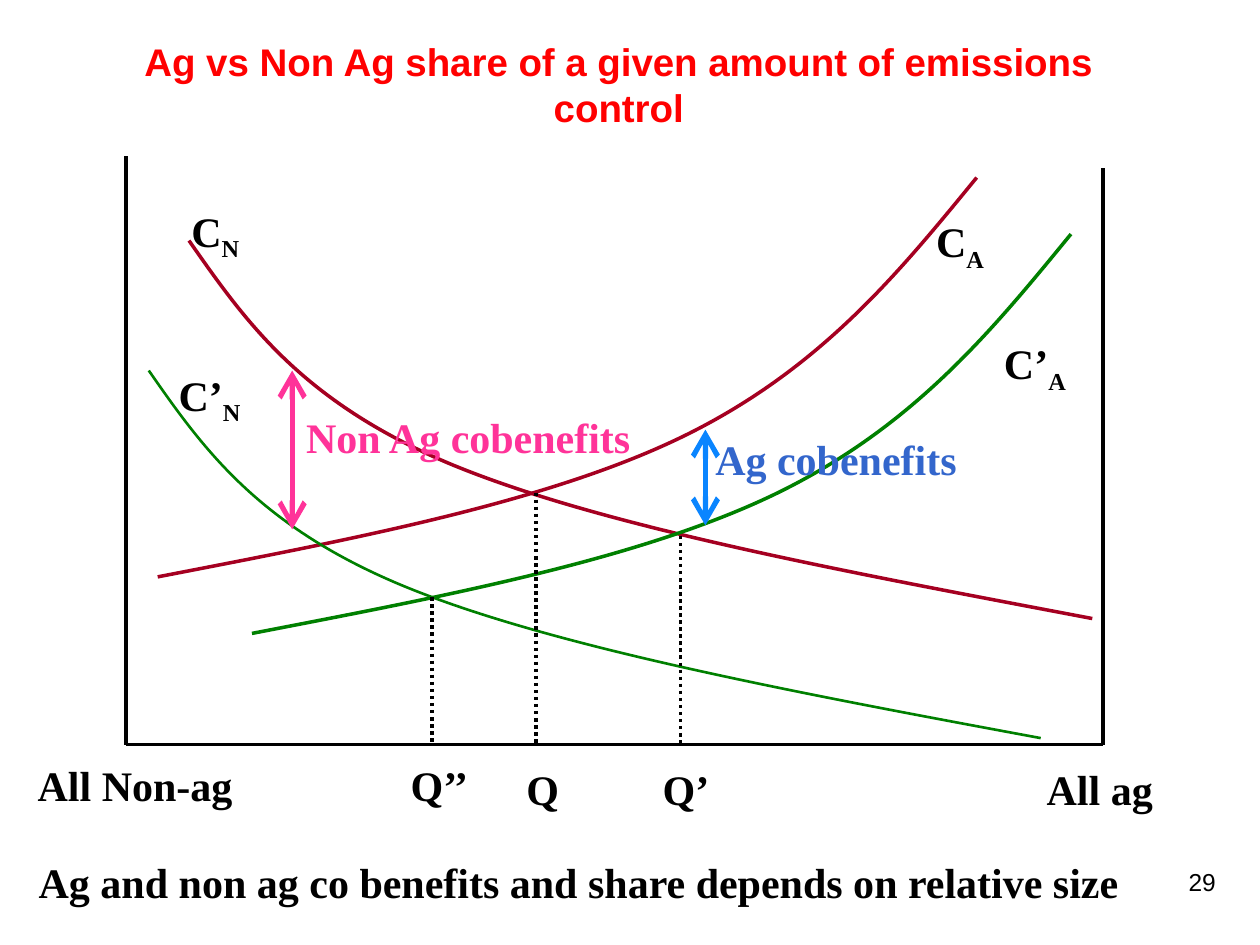
import pptx
import pptx.dml.color
import pptx.enum.dml
import pptx.enum.shapes
import pptx.enum.text
import pptx.oxml.ns
import pptx.util
from lxml import etree

Cm = pptx.util.Cm
Pt = pptx.util.Pt
RGBColor = pptx.dml.color.RGBColor
qn = pptx.oxml.ns.qn
ALIGN = pptx.enum.text.PP_ALIGN
ANCHOR = pptx.enum.text.MSO_ANCHOR

BLACK = RGBColor(0x00, 0x00, 0x00)
RED = RGBColor(0xFF, 0x00, 0x00)
MAROON = RGBColor(0xA5, 0x00, 0x21)
GREEN = RGBColor(0x00, 0x80, 0x00)
PINK = RGBColor(0xFF, 0x33, 0x99)
SKY = RGBColor(0x0A, 0x85, 0xFF)
BLUE = RGBColor(0x33, 0x66, 0xCC)

LEFT_AXIS, RIGHT_AXIS, BASELINE = 2.54, 22.23, 15.01

prs = pptx.Presentation()
prs.slide_width, prs.slide_height = Cm(25.4), Cm(19.05)
slide = prs.slides.add_slide(prs.slide_layouts[6])


def add_line(x1, y1, x2, y2, color=BLACK, width=2, dash=None, arrows=False):
    line = slide.shapes.add_connector(
        pptx.enum.shapes.MSO_CONNECTOR.STRAIGHT, Cm(x1), Cm(y1), Cm(x2), Cm(y2))
    line.line.color.rgb = color
    line.line.width = Pt(width)
    if dash:
        line.line.dash_style = dash
    properties = line._element.spPr
    if arrows:
        outline = properties.find(qn("a:ln"))
        for end in ("a:headEnd", "a:tailEnd"):
            etree.SubElement(outline, qn(end), type="arrow", w="lg", len="lg")
    etree.SubElement(properties, qn("a:effectLst"))


def add_text(box, text, subscript="", align=ALIGN.LEFT, anchor=ANCHOR.TOP, **changes):
    """Write text in a box (left, top, width, height in cm), changing the label font."""
    frame = slide.shapes.add_textbox(*(Cm(length) for length in box)).text_frame
    frame.word_wrap = True
    frame.vertical_anchor = anchor
    paragraph = frame.paragraphs[0]
    paragraph.alignment = align
    font_format = {"name": "Times New Roman", "size": Pt(24), "bold": True} | changes
    color = font_format.pop("color", BLACK)
    for part in filter(None, (text, subscript)):
        run = paragraph.add_run()
        run.text = part
        for attribute, value in font_format.items():
            setattr(run.font, attribute, value)
        run.font.color.rgb = color
    if subscript:
        run._r.get_or_add_rPr().set("baseline", "-25000")


# Title and slide number
add_text((19.48, 17.35, 5.28, 1.27), "29",
         align=ALIGN.RIGHT, name="Arial", size=Pt(14), bold=False)
add_text((1.68, 0.74, 21.59, 1.9), "Ag vs Non Ag share of a given amount of emissions control",
         align=ALIGN.CENTER, anchor=ANCHOR.MIDDLE, name="Arial", size=Pt(22), color=RED)

# Axes
add_line(LEFT_AXIS, BASELINE, LEFT_AXIS, 3.15)
add_line(LEFT_AXIS, BASELINE, RIGHT_AXIS, BASELINE)
add_line(RIGHT_AXIS, BASELINE, RIGHT_AXIS, 3.38)

# Cost curves: each is two cubic Bezier segments sharing the middle point
ag_cost = [(19.69, 3.58), (18.11, 5.51), (16.54, 7.44), (13.79, 8.79),
           (11.05, 10.13), (7.11, 10.87), (3.18, 11.63)]
ag_cost_with_cobenefits = [(x + 1.9, y + 1.14) for x, y in ag_cost]
non_ag_cost = [(3.81, 4.85), (4.93, 6.45), (6.05, 8.08), (9.07, 9.35),
               (12.12, 10.62), (17.07, 11.53), (22.02, 12.47)]
non_ag_cost_with_cobenefits = [(3, 7.47), (4.09, 9.04), (5.21, 10.62), (8.2, 11.84),
                               (11.2, 13.06), (16.08, 13.97), (20.98, 14.88)]

for controls, color, width in [
    (ag_cost, MAROON, 2),
    (non_ag_cost, MAROON, 2),
    (ag_cost_with_cobenefits, GREEN, 2),
    (non_ag_cost_with_cobenefits, GREEN, 1.5),
]:
    start, *others = [(Cm(x), Cm(y)) for x, y in controls]
    builder = slide.shapes.build_freeform(*start)
    builder.add_line_segments(others, close=False)
    curve = builder.convert_to_shape()
    curve.shadow.inherit = False
    curve.fill.background()
    curve.line.color.rgb = color
    curve.line.width = Pt(width)
    # Every three straight segments become one Bezier segment
    steps = list(curve._element.iter(qn("a:lnTo")))
    for first in range(0, len(steps), 3):
        bezier = etree.Element(qn("a:cubicBezTo"))
        steps[first].addprevious(bezier)
        for step in steps[first:first + 3]:
            bezier.append(step[0])
            step.getparent().remove(step)

# Drop lines from the crossings to the quantities
for x, crossing in [(8.71, 12.04), (10.8, 9.93), (13.72, 10.8)]:
    add_line(x, crossing, x, BASELINE, dash=pptx.enum.dml.MSO_LINE.ROUND_DOT)

# Cobenefit gaps
for x, top, bottom, color in [(14.22, 8.66, 10.59, SKY), (5.89, 7.47, 10.67, PINK)]:
    add_line(x, top, x, bottom, color, width=3, arrows=True)

# Curve labels
for left, top, width, cost, sector in [
    (3.61, 4.01, 1.9, "C", "N"),
    (18.62, 4.22, 1.7, "C", "A"),
    (3.35, 7.32, 1.9, "C’", "N"),
    (19.99, 6.68, 2.24, "C’", "A"),
]:
    add_text((left, top, width, 1.27), cost, sector)

# Axis, cobenefit and conclusion labels
for left, top, width, label, color in [
    (0.51, 15.19, 4.52, "All Non-ag", BLACK),
    (8.03, 15.19, 2.36, "Q’’", BLACK),
    (10.36, 15.27, 1.09, "Q", BLACK),
    (13.11, 15.27, 1.52, "Q’", BLACK),
    (20.85, 15.27, 3.28, "All ag", BLACK),
    (5.92, 8.18, 7.42, "Non Ag cobenefits", PINK),
    (14.17, 8.61, 6.43, "Ag cobenefits", BLUE),
    (0.53, 17.15, 24.36,
     "Ag and non ag co benefits and share depends on relative size", BLACK),
]:
    add_text((left, top, width, 1.19), label, color=color)

prs.save("out.pptx")
